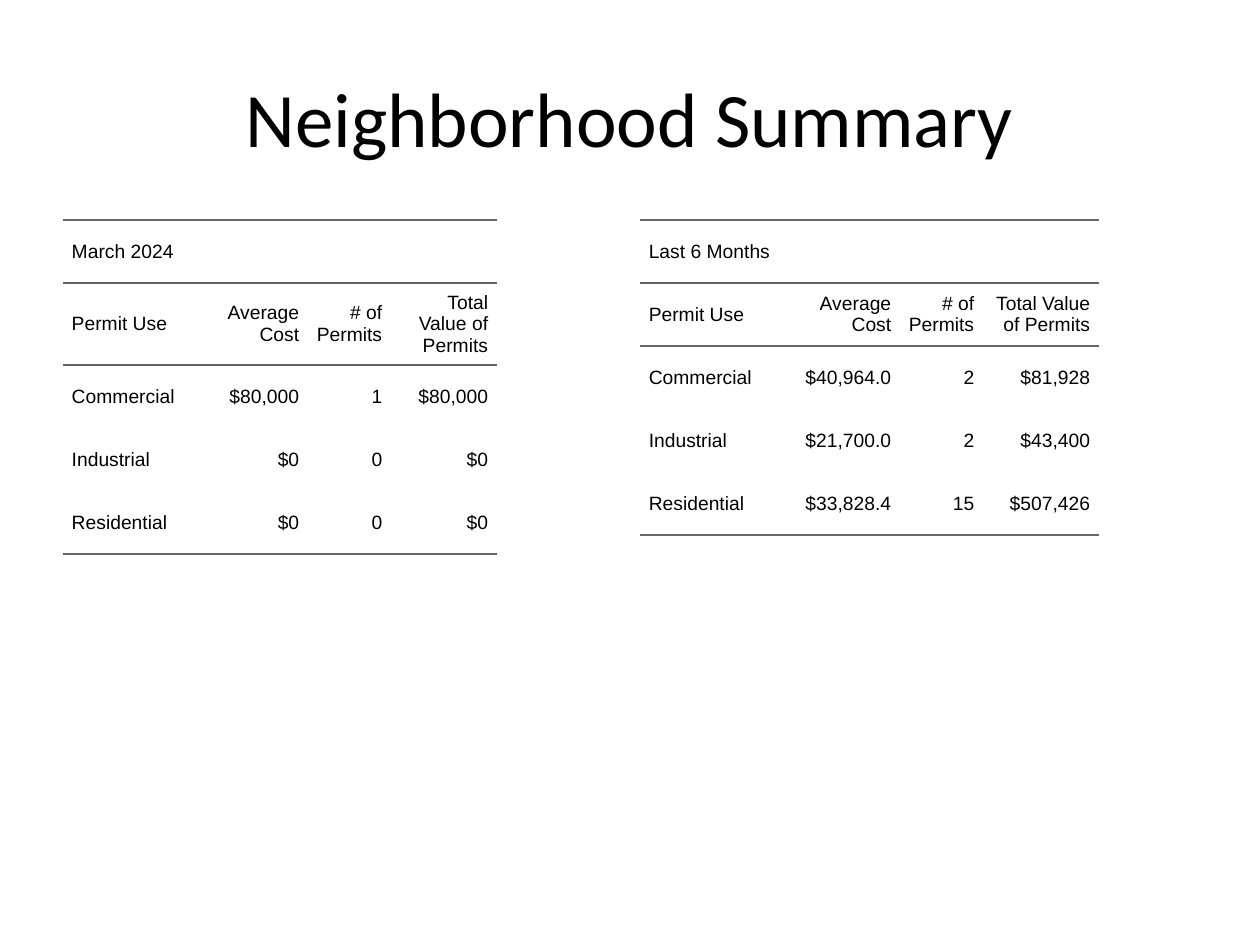
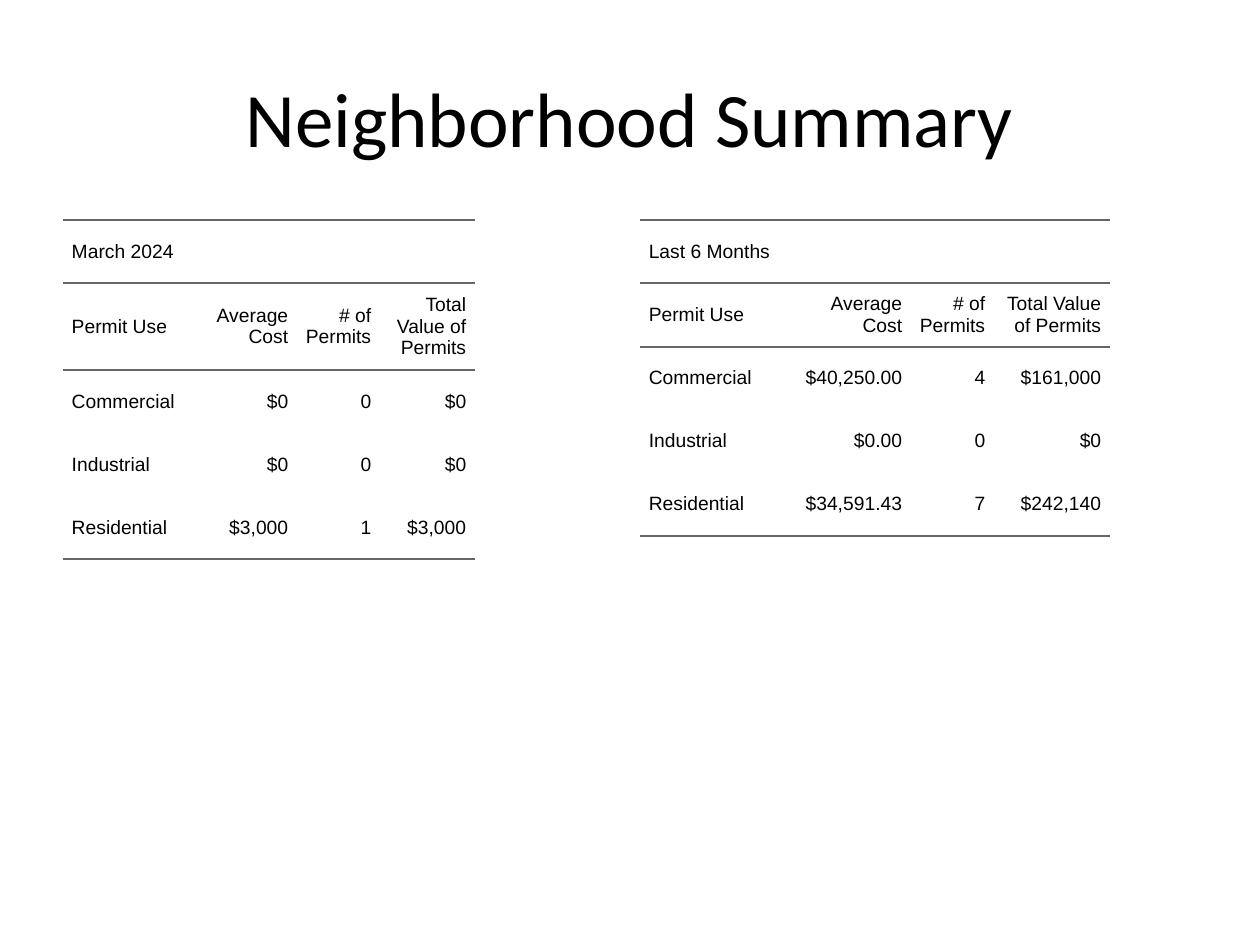
import lxml.etree
import pptx
import pptx.dml.color
import pptx.enum.text
import pptx.oxml.ns
import pptx.util

PX = 914400 / 126
BLACK = pptx.dml.color.RGBColor(0x00, 0x00, 0x00)
RULE = pptx.dml.color.RGBColor(0x66, 0x66, 0x66)
WHITE = pptx.dml.color.RGBColor(0xFF, 0xFF, 0xFF)
TITLE_FONT, TABLE_FONT = "Calibri", "Arial"
PAD = pptx.util.Pt(5)
NO_STYLE = "{2D5ABB26-0587-4C30-8999-92F81FD0307C}"

TITLE = "Neighborhood Summary"
TITLE_BOX = (63, 38, 1134, 158)
MONTH_BOX = (63, 220, 557, 624)
HALF_YEAR_BOX = (640, 220, 557, 624)
ROW_H = 63
HEADER = ("Permit Use", "Average Cost", "# of Permits", "Total Value of Permits")
USES = ("Commercial", "Industrial", "Residential")

# Per slide: column widths and values for the month and for the half year
SLIDES = [
    (
        ((139, 106, 83, 106),
         [("$80,000", "1", "$80,000"), ("$0", "0", "$0"), ("$0", "0", "$0")]),
        ((139, 121, 83, 116),
         [("$40,964.0", "2", "$81,928"), ("$21,700.0", "2", "$43,400"),
          ("$33,828.4", "15", "$507,426")]),
    ),
    (
        ((139, 95, 83, 95),
         [("$0", "0", "$0"), ("$0", "0", "$0"), ("$3,000", "1", "$3,000")]),
        ((139, 132, 83, 116),
         [("$40,250.00", "4", "$161,000"), ("$0.00", "0", "$0"),
          ("$34,591.43", "7", "$242,140")]),
    ),
]


def px(n):
    return pptx.util.Emu(round(n * PX))


def add_run(p, text, font, size):
    r = p.add_run()
    r.text = text
    r.font.name = font
    r.font.size = pptx.util.Pt(size)
    r.font.color.rgb = BLACK


def add_title(s, box):
    sp = s.shapes.add_textbox(*map(px, box))
    tf = sp.text_frame
    tf.word_wrap = True
    tf.vertical_anchor = pptx.enum.text.MSO_ANCHOR.MIDDLE
    p = tf.paragraphs[0]
    p.alignment = pptx.enum.text.PP_ALIGN.CENTER
    add_run(p, TITLE, TITLE_FONT, 44)


def set_borders(cell, ruled):
    """Rule the named sides and leave the others open."""
    qn = pptx.oxml.ns.qn
    tc_pr = cell._tc.get_or_add_tcPr()
    for side in "LRTB":
        ln = lxml.etree.SubElement(tc_pr, qn(f"a:ln{side}"))
        if side in ruled:
            ln.set("w", str(pptx.util.Pt(1.5)))
            fill = lxml.etree.SubElement(ln, qn("a:solidFill"))
            lxml.etree.SubElement(fill, qn("a:srgbClr")).set("val", str(RULE))
        else:
            lxml.etree.SubElement(ln, qn("a:noFill"))


def fill_cell(cell, text, align, ruled):
    cell.margin_left = cell.margin_right = 0
    cell.margin_top = cell.margin_bottom = PAD
    cell.vertical_anchor = pptx.enum.text.MSO_ANCHOR.MIDDLE
    set_borders(cell, ruled)
    cell.fill.background()
    if not text:
        return
    p = cell.text_frame.paragraphs[0]
    p.alignment = align
    p.space_before = p.space_after = PAD
    p_pr = p._p.get_or_add_pPr()
    for name, value in (("marL", PAD), ("marR", PAD), ("indent", 0)):
        p_pr.set(name, str(value))
    add_run(p, text, TABLE_FONT, 11)


def add_permit_table(s, box, period, widths, values):
    rows = [(period, "", "", ""), HEADER]
    rows += [(use, *vals) for use, vals in zip(USES, values)]
    gf = s.shapes.add_table(len(rows), len(HEADER), *map(px, box))
    tbl = gf.table
    tbl.first_row = tbl.horz_banding = False
    tbl._tbl.tblPr.find(pptx.oxml.ns.qn("a:tableStyleId")).text = NO_STYLE
    for col, w in zip(tbl.columns, widths):
        col.width = px(w)
    for row in tbl.rows:
        row.height = px(ROW_H)
    gf.width, gf.height = px(box[2]), px(box[3])

    # Period and header are ruled above and below, the last row below
    rules = ["TB", "TB", "T", "", "B"]
    align = pptx.enum.text.PP_ALIGN
    for i, texts in enumerate(rows):
        for j, text in enumerate(texts):
            fill_cell(tbl.cell(i, j), text, align.RIGHT if j else align.LEFT, rules[i])
    tbl.cell(0, 0).merge(tbl.cell(0, len(HEADER) - 1))


def add_summary_slide(prs, month, half_year):
    s = prs.slides.add_slide(prs.slide_layouts[6])
    s.background.fill.solid()
    s.background.fill.fore_color.rgb = WHITE
    add_permit_table(s, MONTH_BOX, "March 2024", *month)
    add_permit_table(s, HALF_YEAR_BOX, "Last 6 Months", *half_year)
    add_title(s, TITLE_BOX)


def main():
    prs = pptx.Presentation()
    prs.slide_width, prs.slide_height = px(1260), px(945)
    for month, half_year in SLIDES:
        add_summary_slide(prs, month, half_year)
    prs.save("out.pptx")


if __name__ == "__main__":
    main()
